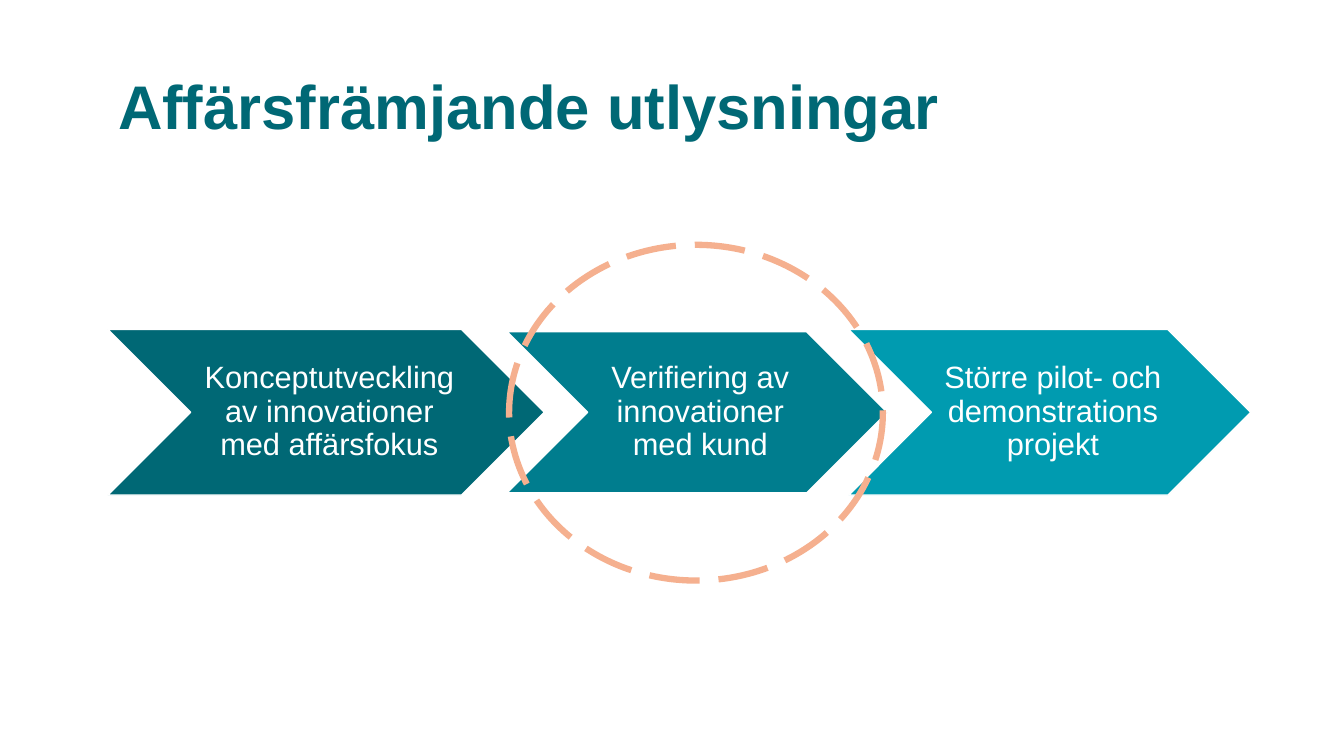
from pptx import Presentation
from pptx.dml.color import RGBColor
from pptx.enum.dml import MSO_LINE
from pptx.enum.shapes import MSO_SHAPE
from pptx.enum.text import MSO_ANCHOR, PP_ALIGN
from pptx.util import Cm, Pt

CHEVRON, OVAL = MSO_SHAPE.CHEVRON, MSO_SHAPE.OVAL
TOP, MIDDLE = MSO_ANCHOR.TOP, MSO_ANCHOR.MIDDLE
LEFT, CENTER = PP_ALIGN.LEFT, PP_ALIGN.CENTER
LONG_DASH = MSO_LINE.LONG_DASH
TEAL, WHITE, PEACH = "006875", "FFFFFF", "F5B08F"
MID_Y = 10.39


def color(value):
    return RGBColor.from_string(value)


def write(sp, text, size, bold, ink, align, frame):
    tf = sp.text_frame
    for name, value in frame.items():
        setattr(tf, name, value)
    p = tf.paragraphs[0]
    p.alignment = align
    p.line_spacing = 0.9
    r = p.add_run()
    r.text = text
    for name, value in {"name": "Arial", "size": Pt(size), "bold": bold}.items():
        setattr(r.font, name, value)
    r.font.color.rgb = color(ink)


prs = Presentation()
prs.slide_width, prs.slide_height = Cm(33.87), Cm(19.05)
s = prs.slides.add_slide(prs.slide_layouts[5])

title = s.shapes.title
box = {"left": 2.72, "top": 1.8, "width": 28.83, "height": 3.61}
for name, value in box.items():
    setattr(title, name, Cm(value))
write(title, "Affärsfrämjande utlysningar", 44, True, TEAL, LEFT,
      {"vertical_anchor": TOP, "word_wrap": True})

steps = [
    ("Konceptutveckling av innovationer med affärsfokus", 2.72, 11.0, 4.17, TEAL),
    ("Verifiering av innovationer med kund", 12.78, 9.58, 4.06, "007D8E"),
    ("Större pilot- och demonstrations projekt", 21.39, 10.13, 4.17, "009BB0"),
]
step_frame = {
    "vertical_anchor": MIDDLE, "word_wrap": True, "margin_left": Cm(0.25),
    "margin_right": Cm(0.09), "margin_top": Cm(0.09), "margin_bottom": Cm(0.09),
}
for text, left, width, height, fill in steps:
    sp = s.shapes.add_shape(CHEVRON, Cm(left), Cm(MID_Y - height / 2),
                            Cm(width), Cm(height))
    sp.shadow.inherit = False
    sp.fill.solid()
    sp.fill.fore_color.rgb = color(fill)
    sp.line.color.rgb = color(WHITE)
    sp.line.width = Pt(1)
    write(sp, text, 22, False, WHITE, CENTER, step_frame)

ring = s.shapes.add_shape(OVAL, Cm(12.83), Cm(6.17), Cm(9.42), Cm(8.46))
ring.shadow.inherit = False
ring.fill.background()
ring.line.color.rgb = color(PEACH)
ring.line.width = Pt(4.5)
ring.line.dash_style = LONG_DASH

prs.save("out.pptx")
